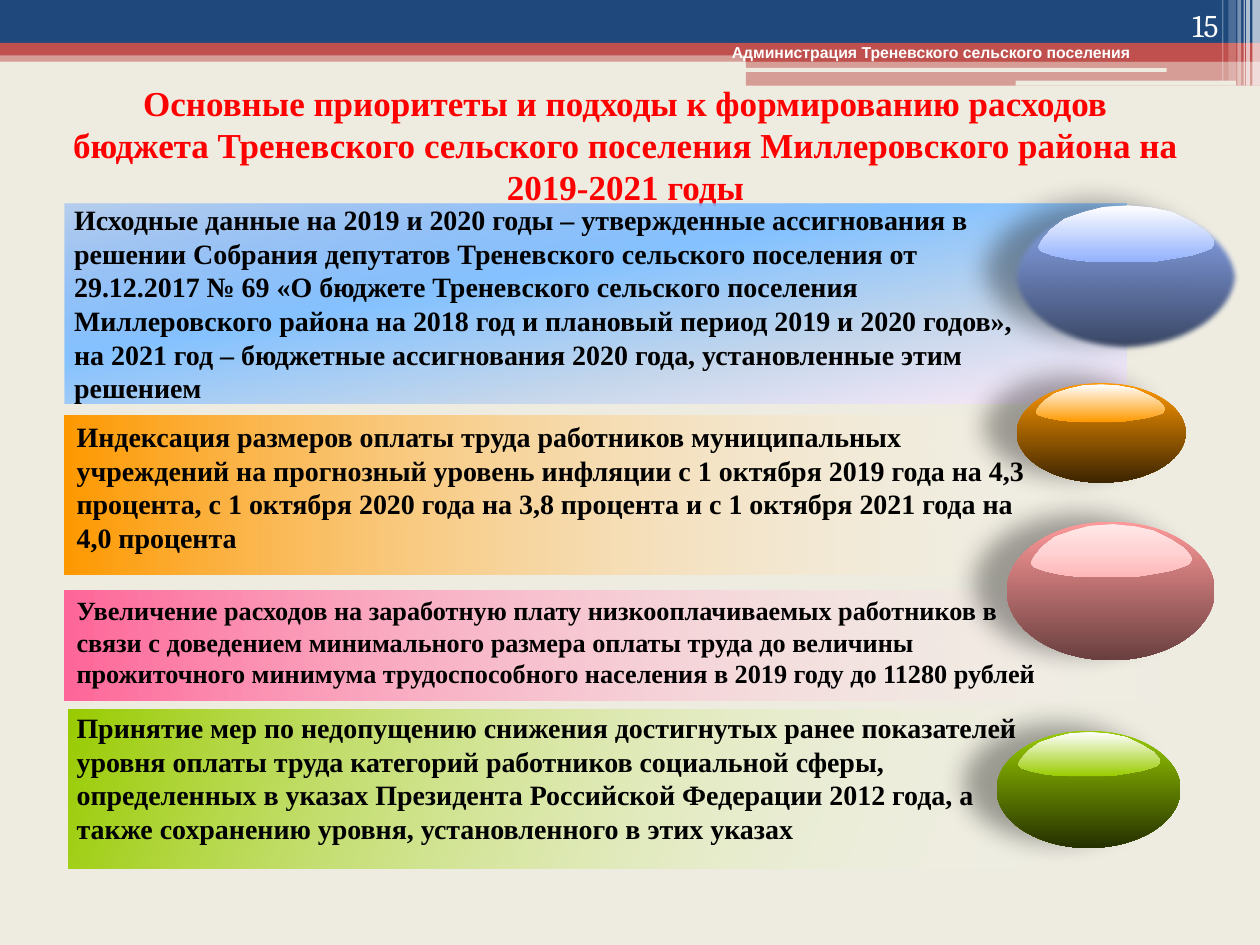
"""Build the slide on budget spending priorities on a grid of 1000 columns by 750 rows."""
from lxml import etree
from pptx import Presentation
from pptx.dml.color import RGBColor
from pptx.enum.shapes import MSO_SHAPE
from pptx.enum.text import MSO_ANCHOR, PP_ALIGN
from pptx.oxml.ns import qn
from pptx.util import Inches, Pt

RECT, ROUND, OVAL = MSO_SHAPE.RECTANGLE, MSO_SHAPE.ROUNDED_RECTANGLE, MSO_SHAPE.OVAL
LEFT, CENTER, RIGHT = PP_ALIGN.LEFT, PP_ALIGN.CENTER, PP_ALIGN.RIGHT
TOP, BOTTOM = MSO_ANCHOR.TOP, MSO_ANCHOR.BOTTOM
COLUMNS, ROWS = 1000, 750
CELL = Inches(10) // COLUMNS

THEME = {
    "paper": "EEECE1", "navy": "1F497D", "red": "C0504D", "white": "FFFFFF",
    "title": "FF0000", "ink": "000000",
    "serif": "Times New Roman", "sans": "Arial", "number": "Cambria",
    "title_size": 20, "body_size": 16, "small_size": 15, "owner_size": 9, "number_size": 18,
}

TITLE = [
    "Основные приоритеты и подходы к формированию расходов",
    "бюджета Треневского сельского поселения Миллеровского района на 2019-2021 годы",
]
OWNER = "Администрация Треневского сельского поселения"
PAGE = "15"

HEADER = [
    (RECT, (0, 40, 1000, 9), "red", 50),
    (RECT, (0, 0, 1000, 34), "navy", 100),
    (RECT, (0, 34, 1000, 10), "red", 100),
    (RECT, (592, 39, 408, 10), "red", 100),
    (RECT, (592, 48, 408, 20), "red", 50),
    (ROUND, (591, 54, 335, 3), "paper", 100),
    (ROUND, (806, 64, 175, 4), "paper", 100),
    (RECT, (994, 0, 6, 68), "white", 65),
    (RECT, (989, 0, 3, 68), "white", 65),
    (RECT, (987, 0, 1, 68), "white", 60),
    (RECT, (982, 0, 3, 68), "white", 40),
    (RECT, (975, 0, 6, 64), "white", 20),
    (RECT, (970, 0, 1, 64), "white", 30),
]

PRIORITIES = [
    {
        "text": "Исходные данные на 2019 и 2020 годы – утвержденные ассигнования в решении Собрания депутатов Треневского сельского поселения от 29.12.2017 № 69 «О бюджете Треневского сельского поселения Миллеровского района на 2018 год и плановый период 2019 и 2020 годов», на 2021 год – бюджетные ассигнования 2020 года, установленные этим решением",
        "text_at": (49, 157, 764, 170), "insets": (10, 4, 0, 4), "size": "body_size",
        "panel_at": (51, 162, 843, 158), "angle": 80,
        "panel": [(0, "5E9EFF", 38), (40, "85C2FF", 100), (70, "C4D6EB", 100), (100, "FFEBFA", 100)],
        "bead_at": (803, 161, 181, 118), "bead": ("93B1FD", "36425E"), "soft": 3,
        "gloss_at": (824, 163, 140, 45), "gloss": ("FFFFFF", "93B1FD"),
    },
    {
        "text": "Индексация размеров оплаты труда работников муниципальных учреждений на прогнозный уровень инфляции с 1 октября 2019 года на 4,3 процента, с 1 октября 2020 года на 3,8 процента и с 1 октября 2021 года на 4,0 процента",
        "text_at": (51, 325, 772, 147), "insets": (10, 8, 10, 4), "size": "body_size",
        "panel_at": (51, 330, 843, 126), "angle": 180,
        "panel": [(0, "FFFFFF", 0), (100, "FF9900", 100)],
        "bead_at": (807, 304, 134, 79), "bead": ("FF9900", "3D2400"), "soft": 0,
        "gloss_at": (822, 305, 103, 30), "gloss": ("FFFFFF", "FF9900"),
    },
    {
        "text": "Увеличение расходов на заработную плату низкооплачиваемых работников в связи с доведением минимального размера оплаты труда до величины прожиточного минимума трудоспособного населения в 2019 году до 11280 рублей",
        "text_at": (51, 468, 787, 85), "insets": (10, 4, 10, 5), "size": "small_size",
        "panel_at": (51, 469, 909, 87), "angle": 180,
        "panel": [(0, "FFFFFF", 0), (100, "FF6699", 100)],
        "bead_at": (799, 414, 165, 110), "bead": ("FF9999", "6A3F3F"), "soft": 0,
        "gloss_at": (818, 416, 128, 42), "gloss": ("FFE9E9", "FFD2D3", "FFB7B9"),
    },
    {
        "text": "Принятие мер по недопущению снижения достигнутых ранее показателей уровня оплаты труда категорий работников социальной сферы, определенных в указах Президента Российской Федерации 2012 года, а также сохранению уровня, установленного в этих указах",
        "text_at": (51, 559, 780, 118), "insets": (10, 5, 10, 5), "size": "body_size",
        "panel_at": (54, 563, 819, 126), "angle": 200,
        "panel": [(0, "FFFFFF", 0), (100, "99CC00", 100)],
        "bead_at": (791, 580, 146, 93), "bead": ("99CC00", "253000"), "soft": 0,
        "gloss_at": (808, 581, 113, 35), "gloss": ("FFFFFF", "99CC00"),
    },
]

GLOSS_OUTLINE = [
    (100, 67), (98, 76), (94, 81), (87, 88), (78, 93), (68, 98), (60, 100), (36, 100),
    (26, 98), (18, 95), (8, 88), (2, 81), (0, 74), (2, 62), (7, 43), (15, 24),
    (26, 12), (37, 3), (51, 0), (64, 4), (76, 12), (87, 29), (95, 45), (99, 59),
]


def place(box):
    return [cells * CELL for cells in box]


def add_color(parent, color, opacity):
    node = etree.SubElement(parent, qn("a:srgbClr"), val=color)
    if opacity < 100:
        etree.SubElement(node, qn("a:alpha"), val=str(opacity * 1000))


def paint(shape, stops, angle=90):
    """Fill a borderless shape with one colour stop or a linear gradient."""
    shape.shadow.inherit = False
    shape.line.fill.background()
    if len(stops) == 1:
        fill = etree.Element(qn("a:solidFill"))
        add_color(fill, *stops[0][1:])
    else:
        fill = etree.Element(qn("a:gradFill"), rotWithShape="1")
        stop_list = etree.SubElement(fill, qn("a:gsLst"))
        for position, color, opacity in stops:
            stop = etree.SubElement(stop_list, qn("a:gs"), pos=str(round(position * 1000)))
            add_color(stop, color, opacity)
        etree.SubElement(fill, qn("a:lin"), ang=str(angle * 60000), scaled="0")
    shape.fill.background()
    properties = shape.element.spPr
    properties.replace(properties.find(qn("a:noFill")), fill)


def spread(colors):
    return [(100 * i / (len(colors) - 1), color, 100) for i, color in enumerate(colors)]


def add_bead(slide, priority):
    bead = slide.shapes.add_shape(OVAL, *place(priority["bead_at"]))
    paint(bead, spread(priority["bead"]))
    effects = bead.element.spPr.find(qn("a:effectLst"))
    shadow = etree.SubElement(effects, qn("a:outerShdw"), blurRad=str(Pt(14.5)),
                              dist=str(Pt(19)), dir=str(192 * 60000), rotWithShape="0")
    add_color(shadow, THEME["ink"], 35)
    if priority["soft"]:
        etree.SubElement(effects, qn("a:softEdge"), rad=str(Pt(priority["soft"])))

    left, top, width, height = place(priority["gloss_at"])
    outline = [(left + width * x // 100, top + height * y // 100) for x, y in GLOSS_OUTLINE]
    builder = slide.shapes.build_freeform(*outline[0])
    builder.add_line_segments(outline[1:], close=True)
    paint(builder.convert_to_shape(), spread(priority["gloss"]))


def add_text(slide, paragraphs, box, *, size, color, font=THEME["serif"], bold=True,
             align=LEFT, anchor=TOP, insets=(10, 5, 10, 5)):
    frame = slide.shapes.add_textbox(*place(box)).text_frame
    frame.word_wrap = True
    frame.vertical_anchor = anchor
    frame.margin_left, frame.margin_top, frame.margin_right, frame.margin_bottom = place(insets)
    for i, text in enumerate(paragraphs):
        paragraph = frame.add_paragraph() if i else frame.paragraphs[0]
        paragraph.alignment = align
        run = paragraph.add_run()
        run.text = text
        run.font.name, run.font.size, run.font.bold = font, Pt(THEME[size]), bold
        run.font.color.rgb = RGBColor.from_string(THEME[color])


def main():
    deck = Presentation()
    deck.slide_width, deck.slide_height = COLUMNS * CELL, ROWS * CELL
    slide = deck.slides.add_slide(deck.slide_layouts[6])
    slide.background.fill.solid()
    slide.background.fill.fore_color.rgb = RGBColor.from_string(THEME["paper"])

    for kind, box, color, opacity in HEADER:
        paint(slide.shapes.add_shape(kind, *place(box)), [(0, THEME[color], opacity)])
    add_text(slide, TITLE, (28, 60, 937, 111), size="title_size", color="title", align=CENTER)
    add_text(slide, [OWNER], (571, 29, 394, 25), size="owner_size", color="white",
             font=THEME["sans"])
    add_text(slide, [PAGE], (894, 0, 83, 40), size="number_size", color="white",
             font=THEME["number"], bold=False, align=RIGHT, anchor=BOTTOM)

    for priority in PRIORITIES:
        panel = slide.shapes.add_shape(RECT, *place(priority["panel_at"]))
        paint(panel, priority["panel"], priority["angle"])
        add_bead(slide, priority)
        add_text(slide, [priority["text"]], priority["text_at"], size=priority["size"],
                 color="ink", insets=priority["insets"])
    deck.save("out.pptx")


if __name__ == "__main__":
    main()
